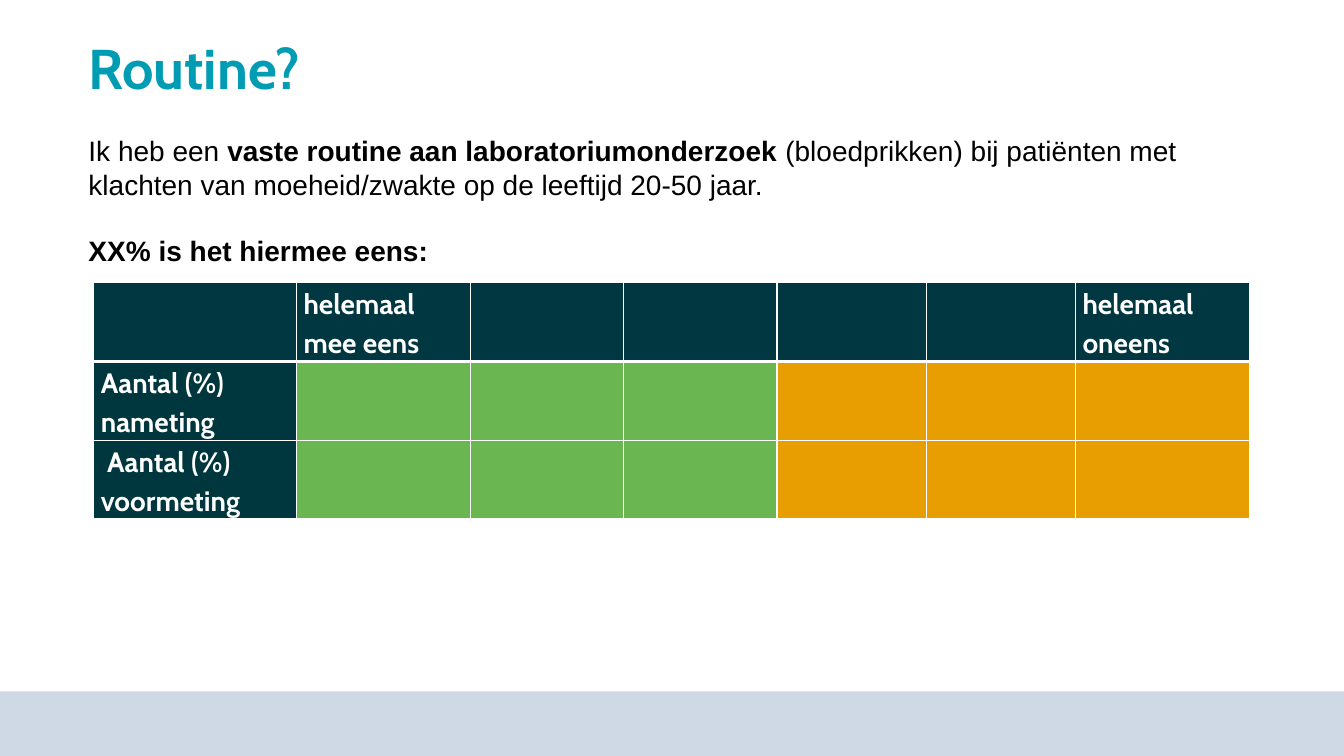
from dataclasses import dataclass

from lxml import etree
from pptx import Presentation
from pptx.dml.color import RGBColor
from pptx.enum.shapes import MSO_SHAPE
from pptx.enum.text import MSO_ANCHOR
from pptx.oxml.ns import qn
from pptx.util import Cm, Pt

RECTANGLE = MSO_SHAPE.RECTANGLE
TOP = MSO_ANCHOR.TOP
MIDDLE = MSO_ANCHOR.MIDDLE


@dataclass(frozen=True)
class Theme:
    heading_font: str = "Cabin"
    body_font: str = "Arial"
    title_size: int = 40
    text_size: int = 20
    title: str = "009CB4"
    text: str = "000000"
    light: str = "FFFFFF"
    footer: str = "CED9E5"
    header: str = "003741"
    label: str = "00373E"
    agree: str = "6AB650"
    disagree: str = "E89E00"


THEME = Theme()
WIDTH, HEIGHT = 33.87, 19.05
FOOTER_HEIGHT = 1.63

# Boxes are left, top, width, height in centimetres.
TITLE_BOX = (1.98, 0.91, 27.13, 1.8)
STATEMENT_BOX = (1.98, 3.25, 29.49, 4.45)
TABLE_BOX = (2.36, 7.11, 29.11, 5.96)

COLUMN_WIDTHS = (5.11, 4.39, 3.86, 3.86, 3.76, 3.76, 4.39)
ROW_HEIGHTS = (2, 1.98, 1.98)
ANSWERS = ("helemaal mee eens", "", "", "", "", "helemaal oneens")
MEASUREMENTS = ("Aantal (%) nameting", " Aantal (%) voormeting")
AGREE_COLUMNS = 3
THIN, THICK = 1, 3

STATEMENT = (
    (
        ("Ik heb een ", False),
        ("vaste routine aan laboratoriumonderzoek ", True),
        ("(bloedprikken) bij patiënten met klachten van moeheid/zwakte "
         "op de leeftijd 20-50 jaar.", False),
    ),
    (("XX% is het hiermee eens:", True),),
)


def add_span(para, text, size, font, color, bold):
    span = para.add_run()
    span.text = text
    span.font.size = Pt(size)
    span.font.name = font
    span.font.bold = bold
    span.font.color.rgb = RGBColor.from_string(color)


def add_frame(page, box, anchor):
    frame = page.shapes.add_textbox(*map(Cm, box)).text_frame
    frame.word_wrap = True
    frame.vertical_anchor = anchor
    return frame


def add_footer(page, box):
    band = page.shapes.add_shape(RECTANGLE, *map(Cm, box))
    band.shadow.inherit = False
    band.fill.solid()
    band.fill.fore_color.rgb = RGBColor.from_string(THEME.footer)
    band.line.fill.background()


def add_title(page, box, text):
    para = add_frame(page, box, MIDDLE).paragraphs[0]
    para.line_spacing = 0.9
    add_span(para, text, THEME.title_size, THEME.heading_font, THEME.title, True)


def add_statement(page, box):
    frame = add_frame(page, box, TOP)
    for index, spans in enumerate(STATEMENT):
        if index:
            para = frame.add_paragraph()
            para.space_before = Pt(23)
        else:
            para = frame.paragraphs[0]
        for text, bold in spans:
            add_span(para, text, THEME.text_size, THEME.body_font, THEME.text, bold)


def set_borders(cell, top, bottom):
    properties = cell._tc.get_or_add_tcPr()
    for side, points in (("L", THIN), ("R", THIN), ("T", top), ("B", bottom)):
        line = etree.SubElement(properties, qn(f"a:ln{side}"), w=str(Pt(points)))
        fill = etree.SubElement(line, qn("a:solidFill"))
        etree.SubElement(fill, qn("a:srgbClr"), val=THEME.light)


def cell_color(row, column):
    if row == 0:
        return THEME.header
    if column == 0:
        return THEME.label
    return THEME.agree if column <= AGREE_COLUMNS else THEME.disagree


def fill_cell(cell, row, column, text):
    set_borders(cell, THICK if row == 1 else THIN, THICK if row == 0 else THIN)
    cell.fill.solid()
    cell.fill.fore_color.rgb = RGBColor.from_string(cell_color(row, column))
    cell.margin_left = cell.margin_right = Cm(0.18)
    cell.margin_top = cell.margin_bottom = 0
    if text:
        para = cell.text_frame.paragraphs[0]
        para.line_spacing = 1.15
        add_span(para, text, THEME.text_size, THEME.heading_font, THEME.light, True)


def add_answer_table(page, box):
    rows, columns = len(ROW_HEIGHTS), len(COLUMN_WIDTHS)
    table = page.shapes.add_table(rows, columns, *map(Cm, box)).table
    table.horz_banding = False
    for column, width in zip(table.columns, COLUMN_WIDTHS):
        column.width = Cm(width)
    for row, height in zip(table.rows, ROW_HEIGHTS):
        row.height = Cm(height)
    blanks = ("",) * len(ANSWERS)
    texts = [("", *ANSWERS)] + [(label, *blanks) for label in MEASUREMENTS]
    for row, row_texts in enumerate(texts):
        for column, text in enumerate(row_texts):
            fill_cell(table.cell(row, column), row, column, text)


def main():
    deck = Presentation()
    deck.slide_width, deck.slide_height = Cm(WIDTH), Cm(HEIGHT)
    page = deck.slides.add_slide(deck.slide_layouts[6])
    add_footer(page, (0, HEIGHT - FOOTER_HEIGHT, WIDTH, FOOTER_HEIGHT))
    add_title(page, TITLE_BOX, "Routine?")
    add_answer_table(page, TABLE_BOX)
    add_statement(page, STATEMENT_BOX)
    deck.save("out.pptx")


if __name__ == "__main__":
    main()
